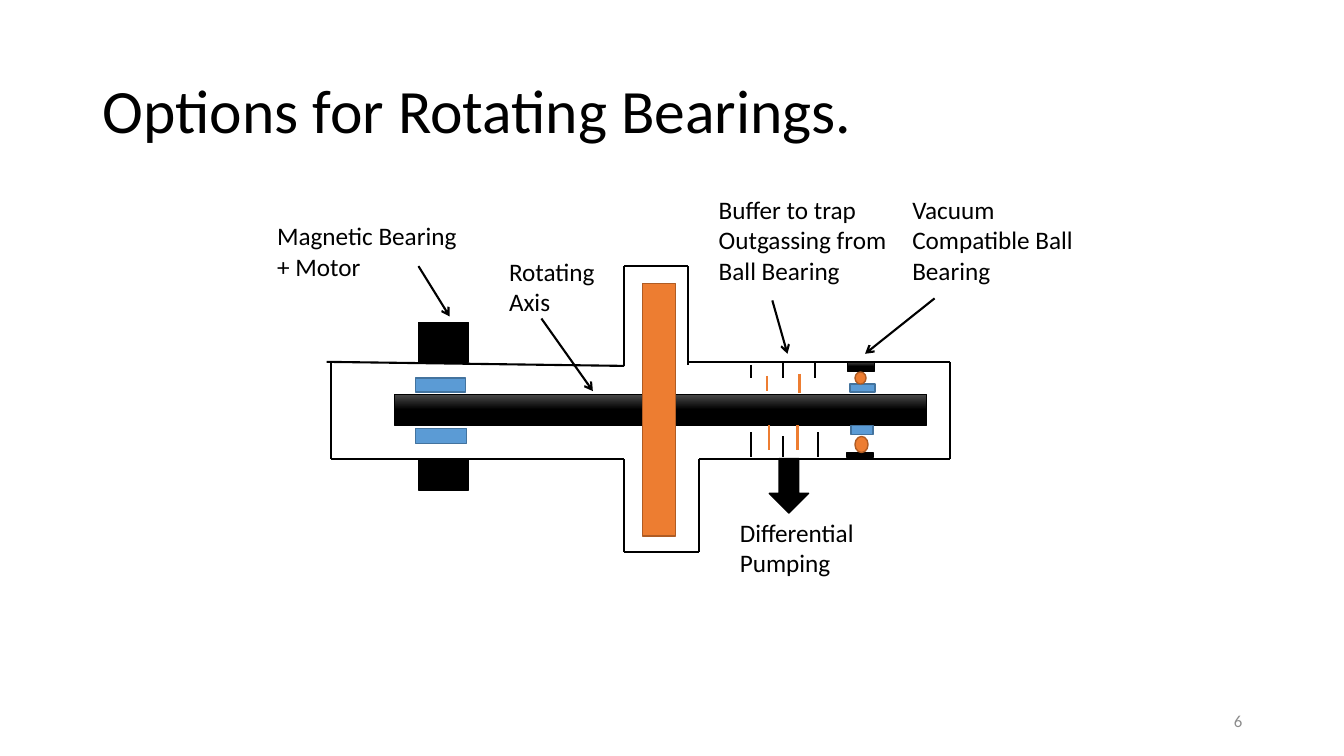
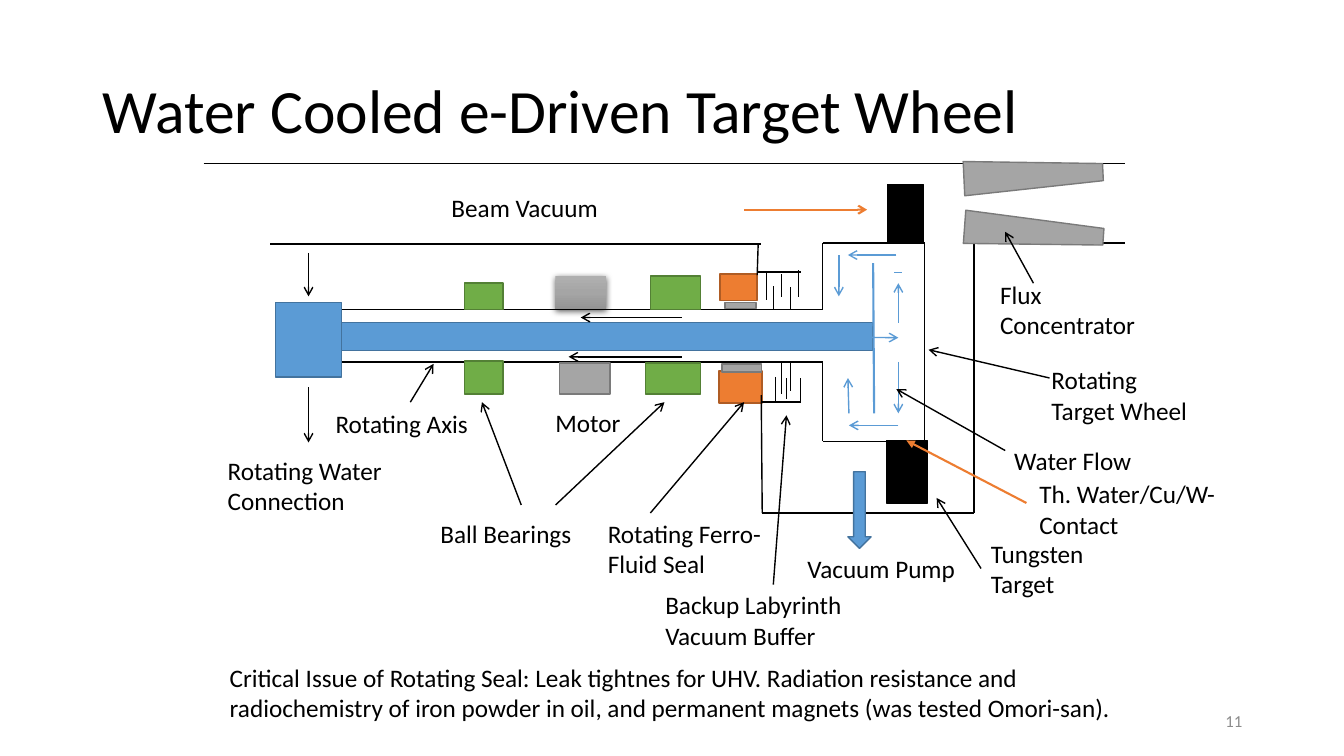
from itertools import pairwise

from lxml.etree import SubElement
from pptx import Presentation
from pptx.dml.color import RGBColor
from pptx.enum.shapes import MSO_CONNECTOR as CONN, MSO_SHAPE as SHAPE
from pptx.enum.text import MSO_ANCHOR as ANCHOR, MSO_AUTO_SIZE as AUTO, PP_ALIGN as ALIGN
from pptx.oxml.ns import qn
from pptx.util import Pt

EMU_PER_PX = 9144  # 100 px to the inch
FONT = "Calibri"
BLACK, BLUE, ORANGE = "000000", "5B9BD5", "ED7D31"
GREEN, GREY, PALE = "70AD47", "A5A5A5", "8C8C8C"
EDGE = {BLACK: BLACK, BLUE: "43739E", ORANGE: "AF5C24", GREEN: "538035", GREY: "7A7A7A"}
STEEL = ("4B4B4B", BLACK, BLACK)
SILVER = ("AFAFAF", GREY, "939393")


def px(n):
    return n * EMU_PER_PX


def rgb(color):
    return RGBColor.from_string(color)


class Deck:
    def __init__(self):
        self.prs = Presentation()
        self.prs.slide_width, self.prs.slide_height = px(1333), px(750)

    def slide(self, title, number):
        self.s = self.prs.slides.add_slide(self.prs.slide_layouts[6])
        self.text(title, 92, 40, 1150, 145, size=44, anchor=ANCHOR.MIDDLE, spacing=0.9)
        self.text(number, 942, 695, 300, 40, size=12, color=PALE,
                  anchor=ANCHOR.MIDDLE, align=ALIGN.RIGHT)

    def text(self, text, x, y, w, h, size=18, color=BLACK, anchor=ANCHOR.TOP,
             align=ALIGN.LEFT, spacing=None, wrap=True, grow=False):
        tf = self.s.shapes.add_textbox(*map(px, (x, y, w, h))).text_frame
        tf.word_wrap = wrap
        tf.vertical_anchor = anchor
        tf.auto_size = AUTO.SHAPE_TO_FIT_TEXT if grow else AUTO.NONE
        p = tf.paragraphs[0]
        p.alignment, p.line_spacing = align, spacing
        r = p.add_run()
        r.text = text
        r.font.name, r.font.size, r.font.color.rgb = FONT, Pt(size), rgb(color)

    def label(self, text, x, y, w, lines=2):
        """Callout text; one-line labels do not wrap."""
        self.text(text, x, y, w, 10 + 30 * lines, wrap=lines > 1, grow=True)

    def shape(self, fill, x, y, w, h, kind=SHAPE.RECTANGLE, rotation=0):
        sp = self.s.shapes.add_shape(kind, *map(px, (x, y, w, h)))
        sp.shadow.inherit = False
        sp.rotation = rotation
        sp.fill.solid()
        sp.fill.fore_color.rgb = rgb(fill)
        sp.line.color.rgb = rgb(EDGE[fill])
        sp.line.width = Pt(1)
        return sp

    def gradient(self, stops, x, y, w, h):
        """Rectangle shaded from top to bottom with three evenly spaced colours."""
        sp = self.shape(BLACK, x, y, w, h)
        sp.line.width = Pt(0.5)
        sp.fill.gradient()
        sp.fill.gradient_angle = 270
        gs_list = sp._element.spPr.find(".//" + qn("a:gsLst"))
        gs_list.clear()
        for i, color in enumerate(stops):
            gs = SubElement(gs_list, qn("a:gs"), pos=str(50000 * i))
            SubElement(gs, qn("a:srgbClr"), val=color)
        return sp

    def drop_shadow(self, sp):
        effects = sp._element.spPr.find(qn("a:effectLst"))
        shadow = SubElement(effects, qn("a:outerShdw"), blurRad=str(Pt(4.5)),
                            dist=str(Pt(1.5)), dir="5400000", algn="ctr", rotWithShape="0")
        color = SubElement(shadow, qn("a:srgbClr"), val=BLACK)
        SubElement(color, qn("a:alpha"), val="63000")

    def line(self, x1, y1, x2, y2, color=BLACK, width=1.0, head=None):
        c = self.s.shapes.add_connector(CONN.STRAIGHT, *map(px, (x1, y1, x2, y2)))
        c.line.color.rgb = rgb(color)
        c.line.width = Pt(width)
        props = c._element.spPr
        if head:
            SubElement(props.find(qn("a:ln")), qn("a:tailEnd"), type=head)
        SubElement(props, qn("a:effectLst"))

    def arrow(self, x1, y1, x2, y2, color=BLACK, width=1.0, head="arrow"):
        self.line(x1, y1, x2, y2, color, width, head)

    def outline(self, *points, width=1.0):
        for a, b in pairwise(points):
            self.line(*a, *b, width=width)


def bearings_slide(deck):
    deck.slide("Options for Rotating Bearings.", "6")
    deck.gradient(STEEL, 391, 391, 528, 31)  # shaft

    # Magnetic bearing and motor
    for color, *box in ((BLUE, 412, 375, 50, 14), (BLUE, 412, 425, 51, 15),
                        (BLACK, 415, 320, 50, 39), (BLACK, 415, 455, 50, 31)):
        deck.shape(color, *box)

    # Ball bearing
    deck.shape(BLUE, 843, 381, 25, 8)
    deck.gradient(STEEL, 840, 359, 27, 9)
    deck.shape(ORANGE, 848, 369, 11, 12, SHAPE.OVAL)
    deck.shape(BLUE, 844, 422, 22, 9)
    deck.shape(BLACK, 840, 449, 26, 5)
    deck.shape(ORANGE, 848, 433, 13, 16, SHAPE.OVAL)

    # Buffer fins: fixed ones black, rotating ones orange
    for color, x, top, bottom in (
            (BLACK, 745, 362, 375), (BLACK, 777, 359, 375), (BLACK, 808, 359, 375),
            (BLACK, 745, 429, 453), (BLACK, 777, 433, 453), (BLACK, 811, 429, 453),
            (ORANGE, 761, 373, 388), (ORANGE, 793, 371, 390),
            (ORANGE, 763, 422, 446), (ORANGE, 791, 422, 446)):
        deck.line(x, top, x, bottom, color, 1.5)

    deck.shape(BLACK, 763, 455, 39, 54, SHAPE.DOWN_ARROW)
    deck.shape(ORANGE, 637, 281, 33, 251)  # wheel
    # Housing
    deck.outline((324, 359), (619, 363), (619, 264), (682, 264), (682, 362), width=1.5)
    deck.outline((682, 359), (942, 359), (942, 455), (693, 455), (693, 548),
                 (619, 548), (619, 455), (328, 455), (328, 359), width=1.5)

    for text, x, y, w, lines in (
            ("Rotating Axis", 495, 249, 115, 2),
            ("Magnetic Bearing + Motor", 265, 214, 204, 2),
            ("Vacuum Compatible Ball Bearing", 895, 188, 213, 3),
            ("Differential Pumping", 724, 508, 156, 2),
            ("Buffer to trap Outgassing from Ball Bearing", 703, 188, 189, 3)):
        deck.label(text, x, y, w, lines)
    for ends in ((537, 316, 588, 388), (415, 264, 446, 314),
                 (927, 296, 858, 351), (766, 298, 781, 351)):
        deck.arrow(*ends, width=1.5)


def target_wheel_slide(deck):
    deck.slide("Water Cooled e-Driven Target Wheel", "11")
    deck.shape(BLUE, 331, 320, 535, 28)  # water pipe
    for color, *box in ((ORANGE, 714, 272, 37, 26), (ORANGE, 713, 368, 43, 32)):
        deck.shape(color, *box)

    # Hollow shaft with wheel, then vacuum walls
    deck.outline((336, 307), (816, 307), (816, 241), (917, 241), (917, 438),
                 (816, 438), (816, 359), (336, 359))
    deck.outline((202, 162), (1116, 162))
    deck.outline((268, 242), (755, 242))
    deck.outline((752, 242), (751, 273))
    deck.outline((755, 392), (756, 509), (966, 509), (966, 241), (1116, 241))

    # Water flow
    deck.line(887, 270, 895, 270, BLUE, 0.5)
    deck.line(866, 261, 867, 410, BLUE, 1.5)
    for ends in ((478, 334, 619, 335), (891, 320, 891, 281), (891, 359, 891, 410),
                 (794, 334, 891, 335), (889, 253, 841, 253), (832, 253, 832, 294),
                 (891, 422, 842, 422), (842, 410, 841, 375)):
        deck.arrow(*ends, color=BLUE)

    # Flux concentrator
    deck.shape(GREY, 1008, 105, 34, 138, SHAPE.TRAPEZOID, 87.3)
    deck.shape(GREY, 1009, 161, 33, 138, SHAPE.TRAPEZOID, 94.1)

    # Target, bearings, motor, water connection, seal
    for color, *box in (
            (BLACK, 880, 183, 36, 58), (BLACK, 879, 437, 41, 62),
            (GREEN, 645, 274, 50, 33), (GREEN, 640, 360, 55, 31),
            (GREY, 555, 360, 50, 31),
            (GREEN, 461, 281, 38, 26), (GREEN, 461, 358, 38, 33),
            (BLUE, 273, 300, 66, 74),
            (GREY, 719, 300, 31, 6), (GREY, 716, 361, 39, 8)):
        deck.shape(color, *box)
    motor = deck.gradient(SILVER, 551, 274, 50, 33)
    motor.line.fill.background()
    deck.drop_shadow(motor)

    # Labyrinth
    deck.outline((751, 270), (794, 270))
    deck.outline((756, 399), (794, 399))
    for x, top, bottom in (
            (760, 270, 298), (775, 272, 295), (792, 268, 295), (767, 284, 307),
            (784, 285, 307), (769, 374, 400), (780, 375, 396), (794, 375, 400),
            (775, 359, 391), (784, 359, 388)):
        deck.line(x, top, x, bottom)
    deck.shape(BLUE, 841, 468, 23, 76, SHAPE.DOWN_ARROW)

    for ends in ((676, 315, 576, 315), (676, 354, 564, 354),
                 (306, 251, 306, 294), (306, 384, 306, 439),
                 (551, 501, 659, 399), (517, 501, 478, 399), (645, 509, 738, 399),
                 (1025, 281, 997, 230), (1041, 375, 921, 347), (973, 564, 929, 494),
                 (407, 399, 430, 361), (767, 580, 780, 412), (997, 447, 889, 386)):
        deck.arrow(*ends)
    deck.arrow(738, 208, 860, 208, ORANGE, 1.5)
    deck.arrow(1018, 499, 899, 437, ORANGE, 1.5, "triangle")

    for text, x, y, w, lines in (
            ("Rotating Water Connection", 216, 447, 215, 2),
            ("Motor", 541, 399, 85, 1),
            ("Ball Bearings", 427, 509, 151, 1),
            ("Rotating Ferro-Fluid Seal", 593, 509, 176, 2),
            ("Beam Vacuum", 438, 186, 167, 1),
            ("Flux Concentrator", 982, 272, 157, 2),
            ("Rotating Target Wheel", 1033, 357, 168, 2),
            ("Tungsten Target", 973, 529, 135, 2),
            ("Rotating Axis", 323, 400, 153, 1),
            ("Backup Labyrinth Vacuum Buffer", 650, 580, 230, 2),
            ("Vacuum Pump", 791, 544, 169, 1),
            ("Water Flow", 996, 437, 138, 1),
            ("Th. Water/Cu/W-Contact", 1021, 470, 202, 2),
            ("Critical Issue of Rotating Seal: Leak tightnes for UHV. Radiation resistance "
             "and radiochemistry of iron powder in oil, and permanent magnets "
             "(was tested Omori-san).", 218, 652, 895, 2)):
        deck.label(text, x, y, w, lines)


def main():
    deck = Deck()
    bearings_slide(deck)
    target_wheel_slide(deck)
    deck.prs.save("out.pptx")


if __name__ == "__main__":
    main()
